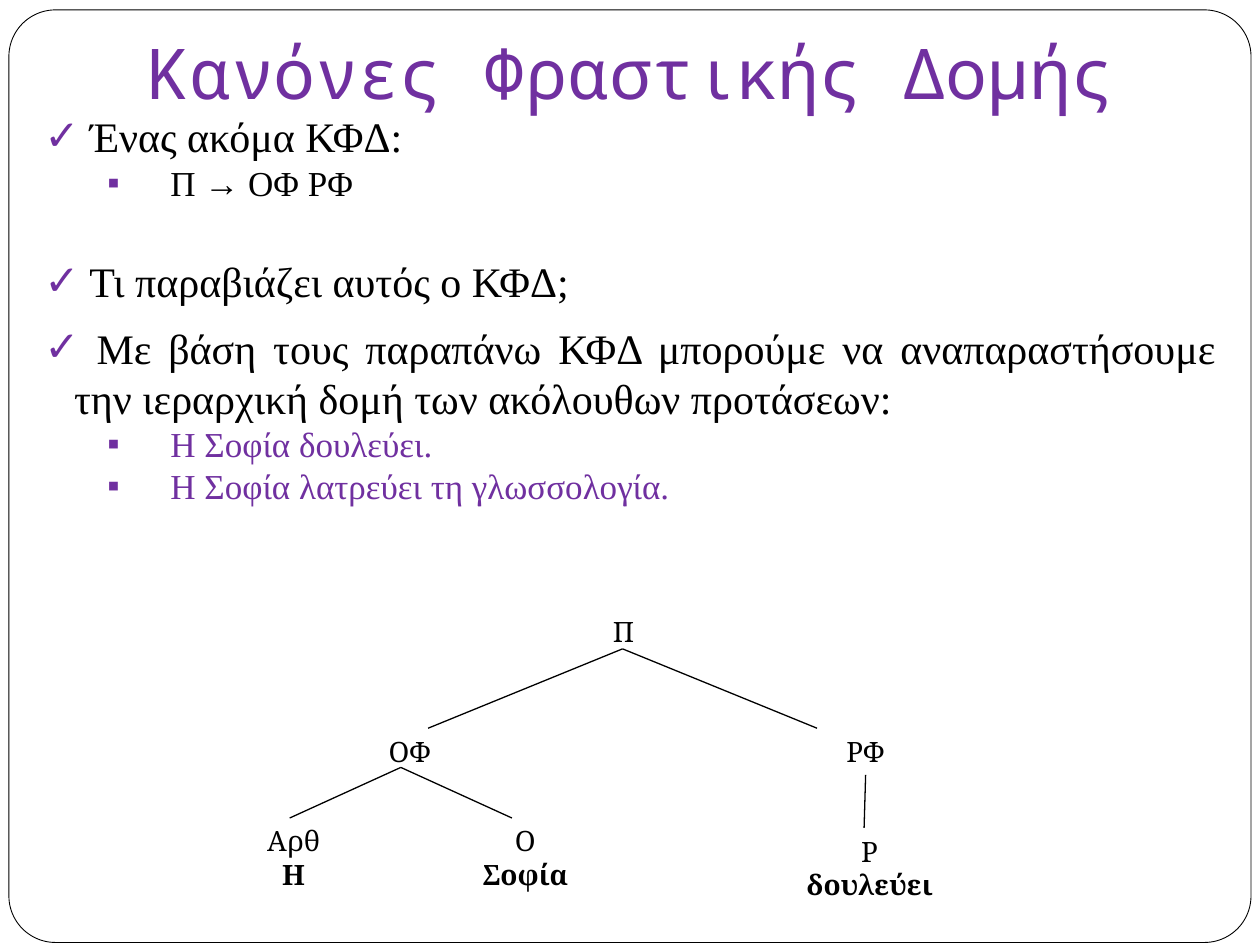
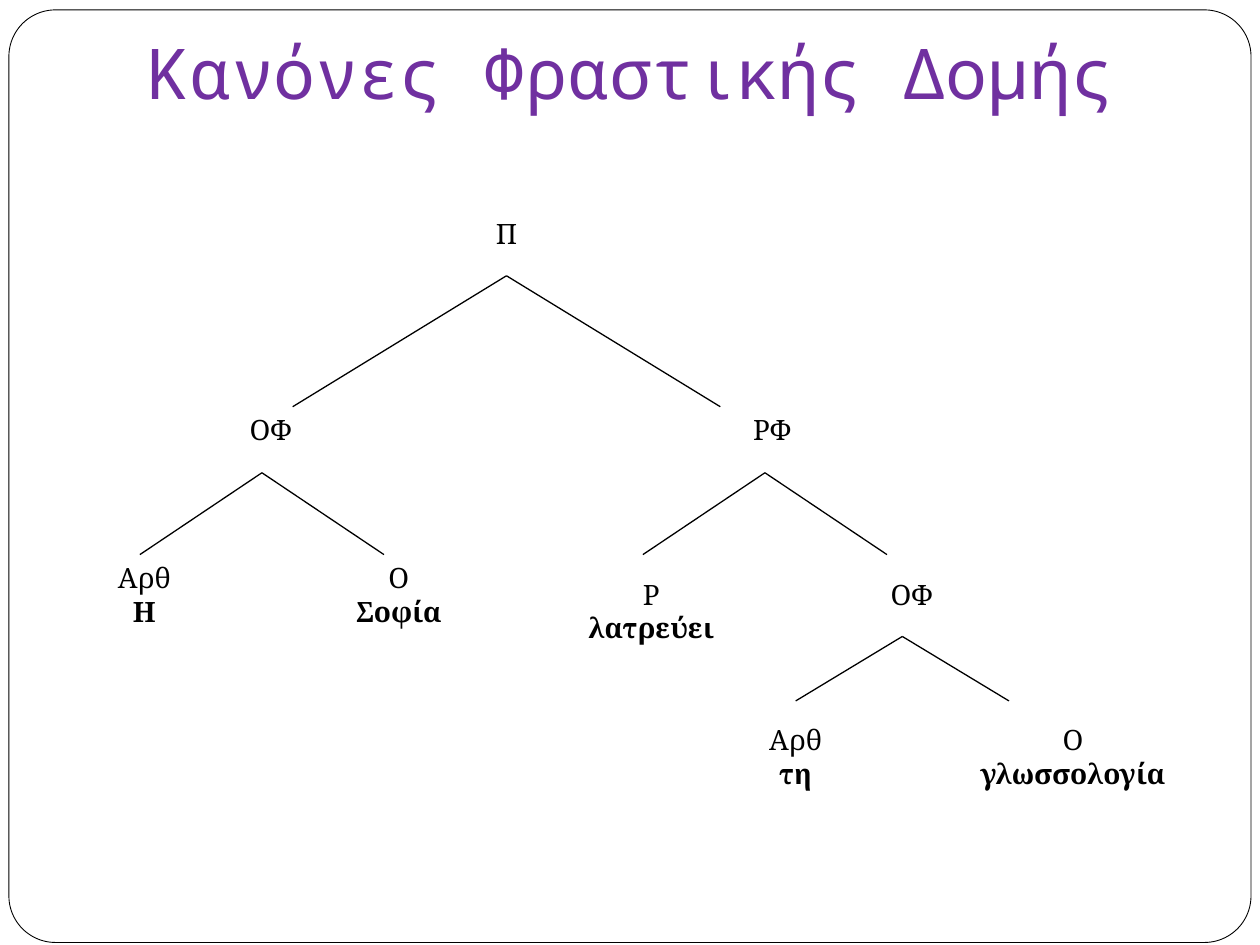
from lxml import etree
from pptx import Presentation
from pptx.dml.color import RGBColor
from pptx.enum.shapes import MSO_CONNECTOR, MSO_SHAPE
from pptx.enum.text import MSO_ANCHOR, MSO_AUTO_SIZE, PP_ALIGN
from pptx.oxml.ns import qn
from pptx.util import Cm, Pt

LEFT, CENTER, JUSTIFY = PP_ALIGN.LEFT, PP_ALIGN.CENTER, PP_ALIGN.JUSTIFY
STRAIGHT, ROUNDED = MSO_CONNECTOR.STRAIGHT, MSO_SHAPE.ROUNDED_RECTANGLE
BOTTOM, TOP = MSO_ANCHOR.BOTTOM, MSO_ANCHOR.TOP
NO_FIT = MSO_AUTO_SIZE.NONE

PURPLE = RGBColor(0x70, 0x30, 0xA0)
BLACK = RGBColor(0, 0, 0)
WHITE = RGBColor(0xFF, 0xFF, 0xFF)
TITLE_FONT, LIST_FONT, TREE_FONT = "Noto Sans Mono", "Times New Roman", "Cambria"
TITLE_AND_BODY, TITLE_ONLY = 1, 5

TITLE = "Κανόνες Φραστικής Δομής"

# Level, text, colour, alignment, space before in points
RULES = [
    (0, "Ένας ακόμα ΚΦΔ:", BLACK, LEFT, 0),
    (1, "Π → ΟΦ ΡΦ", BLACK, LEFT, 0),
    (0, "Τι παραβιάζει αυτός ο ΚΦΔ;", BLACK, LEFT, 30),
    (0, "Με βάση τους παραπάνω ΚΦΔ μπορούμε να αναπαραστήσουμε "
        "την ιεραρχική δομή των ακόλουθων προτάσεων:", BLACK, JUSTIFY, 9),
    (1, "Η Σοφία δουλεύει.", PURPLE, LEFT, 0),
    (1, "Η Σοφία λατρεύει τη γλωσσολογία.", PURPLE, LEFT, 0),
]

# Bullet, size in points, left margin and hanging indent in cm, lead-in space
LEVELS = [("✓", 24, 0.6, 0.6, " "), ("▪", 20, 2.54, 1.27, "")]

# Nodes: category, word, centre and top in cm
# Branches: apex in cm, sideways offsets of the feet, drop
WORKS_TREE = {
    "nodes": [
        ("Π", None, 12.57, 12.27),
        ("ΟΦ", None, 8.26, 14.68),
        ("ΡΦ", None, 17.45, 14.68),
        ("Αρθ", "Η", 5.92, 16.48),
        ("Ο", "Σοφία", 10.59, 16.48),
        ("Ρ", "δουλεύει", 17.53, 16.69),
    ],
    "branches": [
        (12.55, 13.08, (-3.92, 3.92), 1.6),
        (8.08, 15.47, (-2.24, 2.24), 1.02),
        (17.45, 15.62, (-0.03,), 1.07),
    ],
}
ADORES_TREE = {
    "nodes": [
        ("Π", None, 10.21, 4.24),
        ("ΟΦ", None, 5.46, 8.2),
        ("ΡΦ", None, 15.57, 8.2),
        ("Αρθ", "Η", 2.91, 11.18),
        ("Ο", "Σοφία", 8.04, 11.18),
        ("Ρ", "λατρεύει", 13.13, 11.51),
        ("ΟΦ", None, 18.38, 11.51),
        ("Αρθ", "τη", 16.04, 14.45),
        ("Ο", "γλωσσολογία", 21.63, 14.45),
    ],
    "branches": [
        (10.21, 5.56, (-4.31, 4.31), 2.64),
        (5.28, 9.53, (-2.46, 2.46), 1.65),
        (15.42, 9.53, (-2.46, 2.46), 1.65),
        (18.19, 12.83, (-2.15, 2.15), 1.3),
    ],
}


def place(shape, left, top, width, height):
    shape.left, shape.top = Cm(left), Cm(top)
    shape.width, shape.height = Cm(width), Cm(height)


def write(para, text, font, size, color=BLACK, bold=False, align=CENTER, before=0):
    para.alignment = align
    para.space_before = Pt(before)
    span = para.add_run()
    span.text = text
    span.font.name, span.font.size = font, Pt(size)
    span.font.bold = bold
    span.font.color.rgb = color


def add_bullet(para, char, margin, hanging):
    """Give the paragraph a purple bullet with a hanging indent in cm."""
    props = para._p.get_or_add_pPr()
    props.set("marL", str(Cm(margin)))
    props.set("indent", str(-Cm(hanging)))
    color = etree.SubElement(props, qn("a:buClr"))
    etree.SubElement(color, qn("a:srgbClr"), val=str(PURPLE))
    etree.SubElement(props, qn("a:buChar"), char=char)


def add_frame_to_master(deck, page):
    """Draw the rounded frame and move it behind everything on the master."""
    frame = page.shapes.add_shape(ROUNDED, Cm(0.18), Cm(0.2), Cm(25.04), Cm(18.8))
    frame.adjustments[0] = 0.05
    frame.shadow.inherit = False
    frame.fill.solid()
    frame.fill.fore_color.rgb = WHITE
    frame.line.color.rgb = BLACK
    frame.line.width = Pt(0.5)
    frame.element.nvSpPr.cNvPr.set("id", "20")
    deck.slide_master.shapes.element.insert(2, frame.element)


def add_page(deck, layout):
    page = deck.slides.add_slide(deck.slide_layouts[layout])
    title = page.shapes.title
    place(title, 1.9, -0.64, 21.6, 3.18)
    text = title.text_frame
    text.auto_size = NO_FIT
    text.vertical_anchor = BOTTOM
    text.margin_bottom = Cm(0.25)
    write(text.paragraphs[0], TITLE, TITLE_FONT, 40, color=PURPLE)
    return page


def fill_list(body, items):
    place(body, 0.64, 2.11, 24.13, 9.25)
    text = body.text_frame
    text.auto_size = NO_FIT
    text.vertical_anchor = TOP
    for index, (level, words, color, align, before) in enumerate(items):
        para = text.add_paragraph() if index else text.paragraphs[0]
        para.level = level
        char, size, margin, hanging, lead = LEVELS[level]
        para.space_before = Pt(before)
        add_bullet(para, char, margin, hanging)
        write(para, lead + words, LIST_FONT, size, color=color, align=align, before=before)


def add_branch(page, x, y, foot_x, foot_y):
    branch = page.shapes.add_connector(STRAIGHT, Cm(x), Cm(y), Cm(foot_x), Cm(foot_y))
    branch.line.color.rgb = BLACK
    branch.line.width = Pt(0.75)
    etree.SubElement(branch.element.spPr, qn("a:effectLst"))


def add_node(page, category, word, center, top):
    width, height = (4.4, 1.63) if word else (2.2, 0.94)
    box = page.shapes.add_textbox(Cm(center - width / 2), Cm(top), Cm(width), Cm(height))
    text = box.text_frame
    text.word_wrap = True
    write(text.paragraphs[0], category, TREE_FONT, 16)
    if word:
        write(text.add_paragraph(), word, TREE_FONT, 16, bold=True)


def add_tree(page, tree):
    for x, y, feet, drop in tree["branches"]:
        for offset in feet:
            add_branch(page, x, y, x + offset, y + drop)
    for node in tree["nodes"]:
        add_node(page, *node)


def main():
    deck = Presentation()
    deck.slide_width, deck.slide_height = Cm(25.4), Cm(19.05)

    rules_page = add_page(deck, TITLE_AND_BODY)
    add_frame_to_master(deck, rules_page)
    fill_list(rules_page.placeholders[1], RULES)
    add_tree(rules_page, WORKS_TREE)

    adores_page = add_page(deck, TITLE_ONLY)
    add_tree(adores_page, ADORES_TREE)

    deck.save("out.pptx")


if __name__ == "__main__":
    main()
